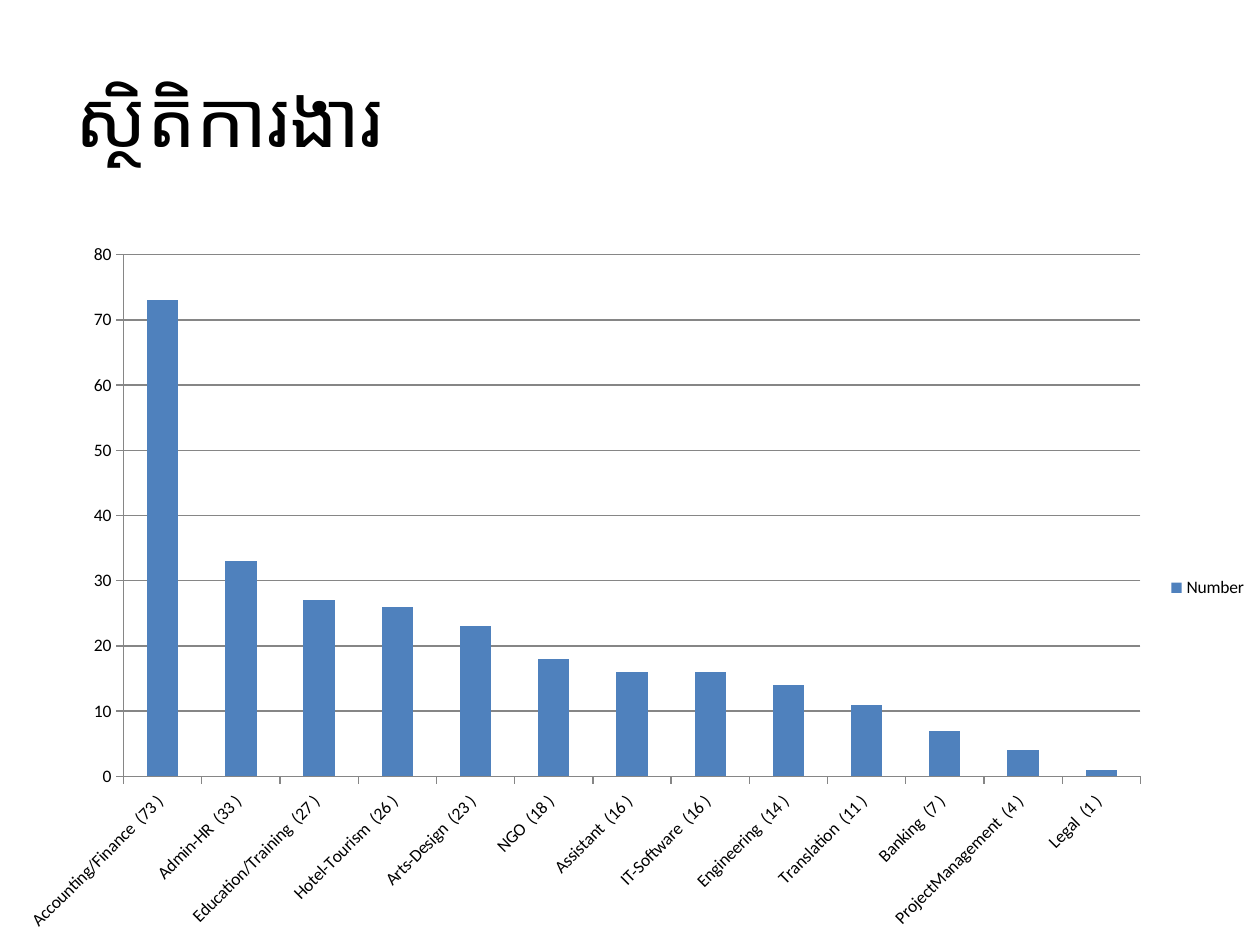
from pptx import Presentation
from pptx.chart.data import CategoryChartData
from pptx.dml.color import RGBColor
from pptx.enum.chart import XL_CHART_TYPE, XL_LEGEND_POSITION, XL_TICK_MARK
from pptx.enum.text import MSO_ANCHOR, PP_ALIGN
from pptx.util import Inches, Pt

BLACK = RGBColor(0x00, 0x00, 0x00)
BLUE = RGBColor(0x4F, 0x81, 0xBD)
GRAY = RGBColor(0x86, 0x86, 0x86)
HARD_SPACE = chr(160)

JOBS = {
    "Accounting/Finance": 73,
    "Admin-HR": 33,
    "Education/Training": 27,
    "Hotel-Tourism": 26,
    "Arts-Design": 23,
    "NGO": 18,
    "Assistant": 16,
    "IT-Software": 16,
    "Engineering": 14,
    "Translation": 11,
    "Banking": 7,
    "ProjectManagement": 4,
    "Legal": 1,
}

presentation = Presentation()
presentation.slide_width = Inches(10)
presentation.slide_height = Inches(7.5)
slide = presentation.slides.add_slide(presentation.slide_layouts[5])

title = slide.shapes.title
title.left, title.top = Inches(0.5), Inches(0.3)
title.width, title.height = Inches(8.42), Inches(1.25)
title.text_frame.vertical_anchor = MSO_ANCHOR.MIDDLE
paragraph = title.text_frame.paragraphs[0]
paragraph.alignment = PP_ALIGN.LEFT
run = paragraph.add_run()
run.text = "ស្ថិតិការងារ"
run.font.name = "Lato"
run.font.size = Pt(44)
run.font.color.rgb = BLACK

chart_data = CategoryChartData()
chart_data.categories = [
    f"{job} {HARD_SPACE}({count} ) " for job, count in JOBS.items()
]
chart_data.add_series("Number", list(JOBS.values()))
chart = slide.shapes.add_chart(
    XL_CHART_TYPE.COLUMN_CLUSTERED,
    Inches(0.02), Inches(1.83), Inches(9.98), Inches(5.67), chart_data,
).chart
chart.has_title = False
chart.font.name = "Calibri"
chart.font.size = Pt(10)
chart.font.color.rgb = BLACK

chart.has_legend = True
chart.legend.position = XL_LEGEND_POSITION.RIGHT
chart.legend.include_in_layout = False

plot = chart.plots[0]
plot.gap_width = 150
plot.vary_by_categories = False
fill = plot.series[0].format.fill
fill.solid()
fill.fore_color.rgb = BLUE

value_axis = chart.value_axis
value_axis.minimum_scale = 0
value_axis.maximum_scale = 80
value_axis.major_unit = 10
value_axis.has_major_gridlines = True
for axis in (chart.category_axis, value_axis):
    axis.major_tick_mark = XL_TICK_MARK.OUTSIDE
    axis.tick_labels.font.size = Pt(10)
for part in (chart.category_axis, value_axis, value_axis.major_gridlines):
    part.format.line.color.rgb = GRAY
    part.format.line.width = Pt(0.75)

label_body = chart.category_axis._element.find(".//{*}txPr/{*}bodyPr")
label_body.set("rot", "-2700000")
label_body.set("vert", "horz")

presentation.save("out.pptx")
